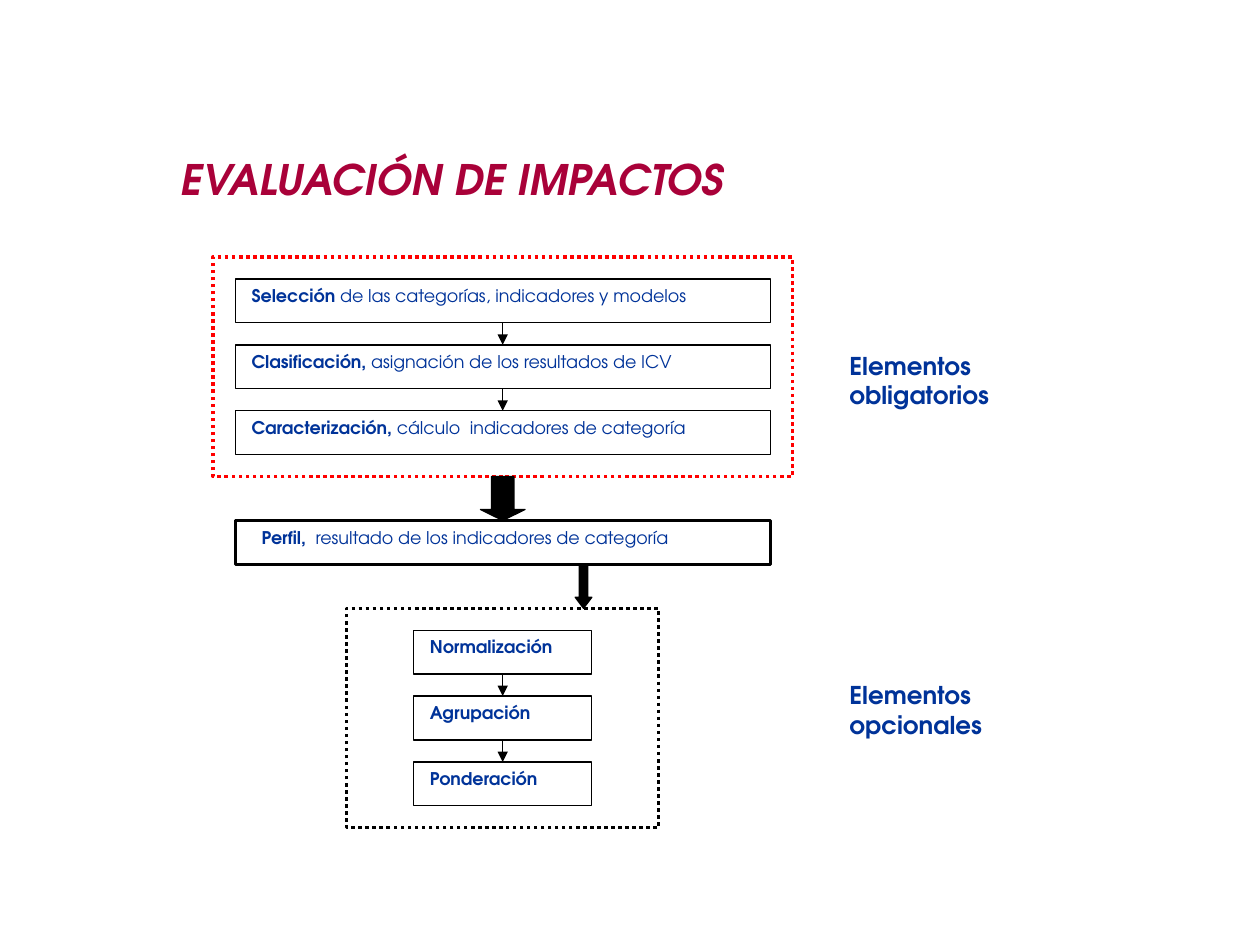
from dataclasses import dataclass

from lxml.etree import SubElement
from pptx import Presentation
from pptx.dml.color import RGBColor
from pptx.enum.dml import MSO_LINE
from pptx.enum.shapes import MSO_CONNECTOR, MSO_SHAPE
from pptx.enum.text import MSO_ANCHOR, PP_ALIGN
from pptx.oxml.ns import qn
from pptx.shapes.autoshape import Shape
from pptx.slide import Slide
from pptx.text.text import TextFrame, _Run
from pptx.util import Inches, Length, Pt

FONT = "TeX Gyre Adventor"
BLUE, CRIMSON, RED, BLACK, WHITE = "003399", "A90139", "FF0000", "000000", "FFFFFF"
LEFT, TOP = 1.69, 2.04
COLUMN = (6.29 - LEFT) / 26
ROW = (6.57 - TOP) / 26
CENTER = 13


@dataclass
class Area:
    column: float
    row: float
    columns: float
    rows: float

    def bounds(self) -> tuple[Length, Length, Length, Length]:
        return x(self.column), y(self.row), Inches(self.columns * COLUMN), Inches(self.rows * ROW)


@dataclass
class Step:
    area: Area
    term: str
    detail: str = ""
    border: float = 0.75
    inset: float = 0.13


@dataclass
class Stage:
    frame: Area
    color: str
    label: str
    label_row: float
    steps: list[Step]


@dataclass
class BlockArrow:
    area: Area
    head: float


def x(column: float) -> Length:
    return Inches(LEFT + column * COLUMN)


def y(row: float) -> Length:
    return Inches(TOP + row * ROW)


def rgb(color: str) -> RGBColor:
    return RGBColor.from_string(color)


def format_run(run: _Run, size: float, color: str, bold: bool) -> None:
    run.font.name = FONT
    run.font.size = Pt(size)
    run.font.color.rgb = rgb(color)
    run.font.bold = bold


def align_top_left(frame: TextFrame) -> None:
    frame.word_wrap = True
    frame.vertical_anchor = MSO_ANCHOR.TOP
    frame.paragraphs[0].alignment = PP_ALIGN.LEFT


def draw_shape(slide: Slide, kind: MSO_SHAPE, area: Area, line: str, width: float, fill: str = "") -> Shape:
    shape = slide.shapes.add_shape(kind, *area.bounds())
    shape.shadow.inherit = False
    shape.line.color.rgb = rgb(line)
    shape.line.width = Pt(width)
    if fill:
        shape.fill.solid()
        shape.fill.fore_color.rgb = rgb(fill)
    else:
        shape.fill.background()
    return shape


def draw_step(slide: Slide, step: Step) -> None:
    box = draw_shape(slide, MSO_SHAPE.RECTANGLE, step.area, BLACK, step.border, WHITE)
    align_top_left(box.text_frame)
    box.text_frame.margin_left = Inches(step.inset)
    for words, bold in ((step.term, True), (step.detail, False)):
        if words:
            run = box.text_frame.paragraphs[0].add_run()
            run.text = words
            format_run(run, 10, BLUE, bold)


def draw_link(slide: Slide, start: Step, end: Step) -> None:
    link = slide.shapes.add_connector(
        MSO_CONNECTOR.STRAIGHT,
        x(CENTER), y(start.area.row + start.area.rows), x(CENTER), y(end.area.row),
    )
    link.line.color.rgb = rgb(BLACK)
    link.line.width = Pt(0.75)
    SubElement(link.line._get_or_add_ln(), qn("a:tailEnd"), type="triangle")
    SubElement(link._element.spPr, qn("a:effectLst"))


def draw_stage(slide: Slide, stage: Stage) -> None:
    frame = draw_shape(slide, MSO_SHAPE.RECTANGLE, stage.frame, stage.color, 2)
    frame.line.dash_style = MSO_LINE.ROUND_DOT
    label = slide.shapes.add_textbox(*Area(28, stage.label_row, 9, 4).bounds())
    label.text_frame.text = stage.label
    align_top_left(label.text_frame)
    format_run(label.text_frame.paragraphs[0].runs[0], 14, BLUE, True)
    for step in stage.steps:
        draw_step(slide, step)
    for start, end in zip(stage.steps, stage.steps[1:]):
        draw_link(slide, start, end)


def draw_block_arrow(slide: Slide, block: BlockArrow) -> None:
    arrow = draw_shape(slide, MSO_SHAPE.DOWN_ARROW, block.area, BLACK, 0.75, BLACK)
    arrow.adjustments[0] = 0.5
    arrow.adjustments[1] = block.head


def write_title(slide: Slide, words: str) -> None:
    title = slide.shapes.title
    title.left, title.top, title.width, title.height = map(Inches, (1.33, 1.17, 6.5, 0.5))
    title.text_frame.text = words
    align_top_left(title.text_frame)
    run = title.text_frame.paragraphs[0].runs[0]
    format_run(run, 24, CRIMSON, True)
    run.font.italic = True


def stack(column: float, row: float, columns: float, texts: list[tuple[str, str]]) -> list[Step]:
    return [
        Step(Area(column, row + 3 * index, columns, 2), term, detail)
        for index, (term, detail) in enumerate(texts)
    ]


STAGES = [
    Stage(Area(0, 0, 26, 10), RED, "Elementos obligatorios", 4, stack(1, 1, 24, [
        ("Selección", " de las categorías, indicadores y modelos"),
        ("Clasificación, ", "asignación de los resultados de ICV"),
        ("Caracterización, ", "cálculo  indicadores de categoría"),
    ])),
    Stage(Area(6, 16, 14, 10), BLACK, "Elementos opcionales", 19, stack(9, 17, 8, [
        ("Normalización", ""), ("Agrupación", ""), ("Ponderación", ""),
    ])),
]
PROFILE = Step(Area(1, 12, 24, 2), "Perfil, ", " resultado de los indicadores de categoría", 1.5, 0.21)
BLOCK_ARROWS = [
    BlockArrow(Area(12, 10, 2, 2), 0.25),
    BlockArrow(Area(16.25, 14, 0.75, 2), 0.66),
]


def main() -> None:
    deck = Presentation()
    deck.slide_width, deck.slide_height = Inches(10), Inches(7.5)
    slide = deck.slides.add_slide(deck.slide_layouts[5])
    write_title(slide, "EVALUACIÓN DE IMPACTOS")
    for stage in STAGES:
        draw_stage(slide, stage)
    draw_step(slide, PROFILE)
    for block in BLOCK_ARROWS:
        draw_block_arrow(slide, block)
    deck.save("out.pptx")


if __name__ == "__main__":
    main()
